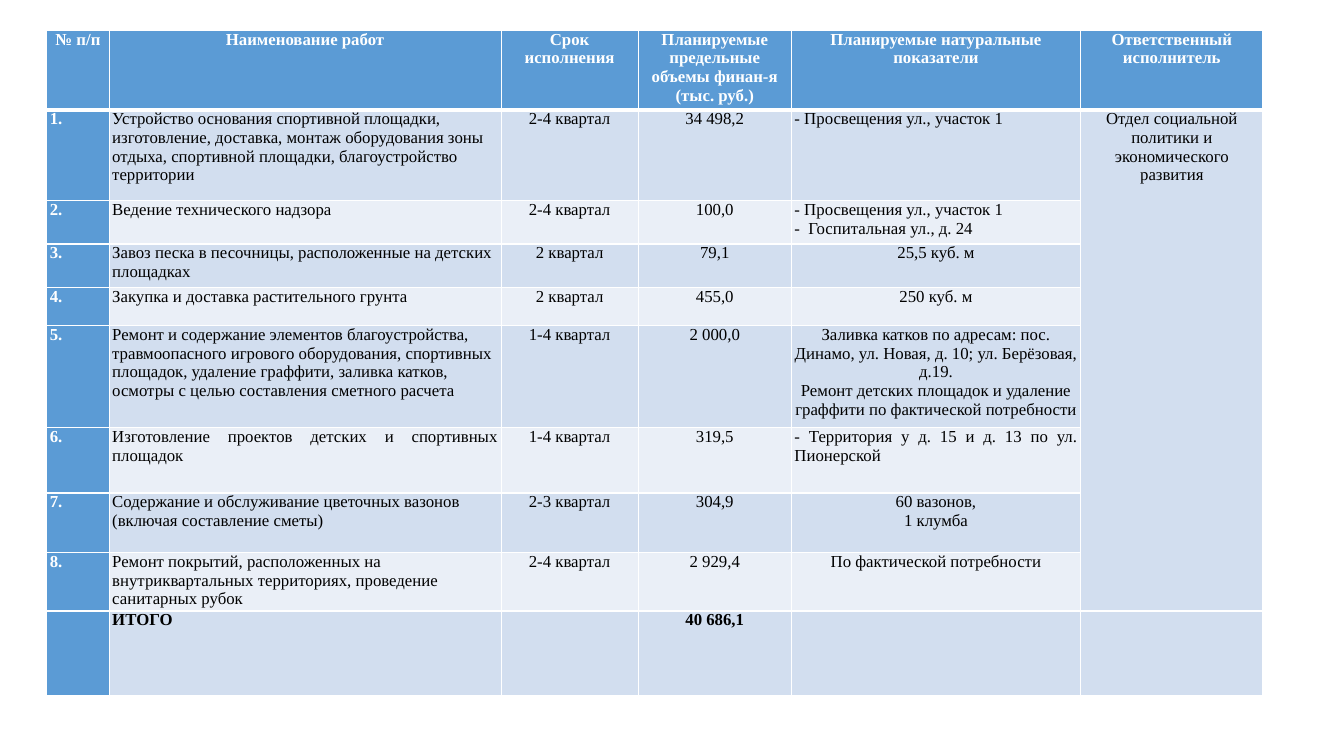
from dataclasses import dataclass

from lxml import etree
from pptx import Presentation
from pptx.dml.color import RGBColor
from pptx.enum.text import PP_ALIGN
from pptx.oxml.ns import qn
from pptx.util import Pt

LEFT, CENTER, JUSTIFY = PP_ALIGN.LEFT, PP_ALIGN.CENTER, PP_ALIGN.JUSTIFY


@dataclass(frozen=True)
class Theme:
    font: str = "Times New Roman"
    size: float = 12
    accent: str = "5B9BD5"
    odd_band: str = "D2DEEF"
    even_band: str = "EAEFF7"
    light: str = "FFFFFF"
    dark: str = "000000"
    border: float = 1
    header_border: float = 3


THEME = Theme()

COL_WIDTHS = [44.6, 280, 97.9, 109.5, 206.6, 130.3]
ROW_HEIGHTS = [56.9, 64.8, 31, 31, 27.4, 72.7, 46.8, 42.5, 41.8, 60.5]
NUMBER, WORK, TERM, BUDGET, AMOUNT, OWNER = range(6)

HEADER = ["№ п/п", "Наименование работ", "Срок исполнения",
          "Планируемые предельные объемы финан-я\n(тыс. руб.)",
          "Планируемые натуральные показатели", "Ответственный исполнитель"]
WORKS = [
    ["Устройство основания спортивной площадки, изготовление, доставка, монтаж "
     "оборудования зоны отдыха, спортивной площадки, благоустройство территории",
     "2-4 квартал", "34 498,2", "- Просвещения ул., участок 1"],
    ["Ведение технического надзора", "2-4 квартал", "100,0",
     "- Просвещения ул., участок 1\n-  Госпитальная ул., д. 24"],
    ["Завоз песка в песочницы, расположенные на детских площадках",
     "2 квартал", "79,1", "25,5 куб. м"],
    ["Закупка и доставка растительного грунта", "2 квартал", "455,0", "250 куб. м"],
    ["Ремонт и содержание элементов благоустройства, травмоопасного игрового "
     "оборудования, спортивных площадок, удаление граффити, заливка катков, "
     "осмотры с целью составления сметного расчета",
     "1-4 квартал", "2 000,0",
     "Заливка катков по адресам: пос. Динамо, ул. Новая, д. 10; ул. Берёзовая, д.19.\n"
     "Ремонт детских площадок и удаление граффити по фактической потребности"],
    ["Изготовление проектов детских и спортивных площадок", "1-4 квартал", "319,5",
     "- Территория у д. 15 и д. 13 по ул. Пионерской"],
    ["Содержание и обслуживание цветочных вазонов (включая составление сметы)",
     "2-3 квартал", "304,9", "60 вазонов,\n1 клумба"],
    ["Ремонт покрытий, расположенных на внутриквартальных территориях, "
     "проведение санитарных рубок",
     "2-4 квартал", "2 929,4", "По фактической потребности"],
]
RESPONSIBLE = "Отдел социальной политики и экономического развития"
TOTAL = ["", "ИТОГО", "", "40 686,1", "", ""]
JUSTIFIED_WORK_ROW = 6


def table_rows():
    body = [[f"{i}.", *work, RESPONSIBLE if i == 1 else ""]
            for i, work in enumerate(WORKS, 1)]
    return [HEADER, *body, TOTAL]


def alignment(row, col, text):
    if row == 0:
        return CENTER
    if col == NUMBER or text.startswith("-"):
        return JUSTIFY
    if col == WORK:
        return JUSTIFY if row == JUSTIFIED_WORK_ROW else LEFT
    return CENTER


def set_borders(cell, bottom):
    """Draw the four cell borders; must run before the cell fill is set."""
    tc_pr = cell._tc.get_or_add_tcPr()
    for side in "LRTB":
        width = bottom if side == "B" else THEME.border
        ln = etree.SubElement(tc_pr, qn(f"a:ln{side}"), w=str(Pt(width)))
        fill = etree.SubElement(ln, qn("a:solidFill"))
        etree.SubElement(fill, qn("a:srgbClr"), val=THEME.light)


def style_cell(cell, row, col, text, last_row):
    on_accent = row == 0 or col == NUMBER
    band = THEME.odd_band if row % 2 or col == OWNER else THEME.even_band
    set_borders(cell, THEME.header_border if row == 0 else THEME.border)
    cell.fill.solid()
    cell.fill.fore_color.rgb = RGBColor.from_string(THEME.accent if on_accent else band)
    cell.margin_left = cell.margin_right = Pt(2.2)
    cell.margin_top = cell.margin_bottom = 0
    cell.text = text
    for p in cell.text_frame.paragraphs:
        p.alignment = alignment(row, col, text)
        p.font.size = Pt(THEME.size)
        for r in p.runs:
            r.font.name = THEME.font
            r.font.size = Pt(THEME.size)
            r.font.bold = on_accent or row == last_row
            r.font.color.rgb = RGBColor.from_string(
                THEME.light if on_accent else THEME.dark)


def add_works_table(s, left, top):
    rows = table_rows()
    last_row = len(rows) - 1
    table = s.shapes.add_table(len(rows), len(HEADER), Pt(left), Pt(top),
                               Pt(sum(COL_WIDTHS)), Pt(sum(ROW_HEIGHTS))).table
    for column, width in zip(table.columns, COL_WIDTHS):
        column.width = Pt(width)
    for row, (texts, height) in enumerate(zip(rows, ROW_HEIGHTS)):
        table.rows[row].height = Pt(height)
        for col, text in enumerate(texts):
            style_cell(table.cell(row, col), row, col, text, last_row)
    table.cell(1, OWNER).merge(table.cell(len(WORKS), OWNER))


def main():
    prs = Presentation()
    prs.slide_width, prs.slide_height = Pt(960), Pt(540)
    s = prs.slides.add_slide(prs.slide_layouts[6])
    add_works_table(s, left=33.4, top=21.6)
    prs.save("out.pptx")


if __name__ == "__main__":
    main()
